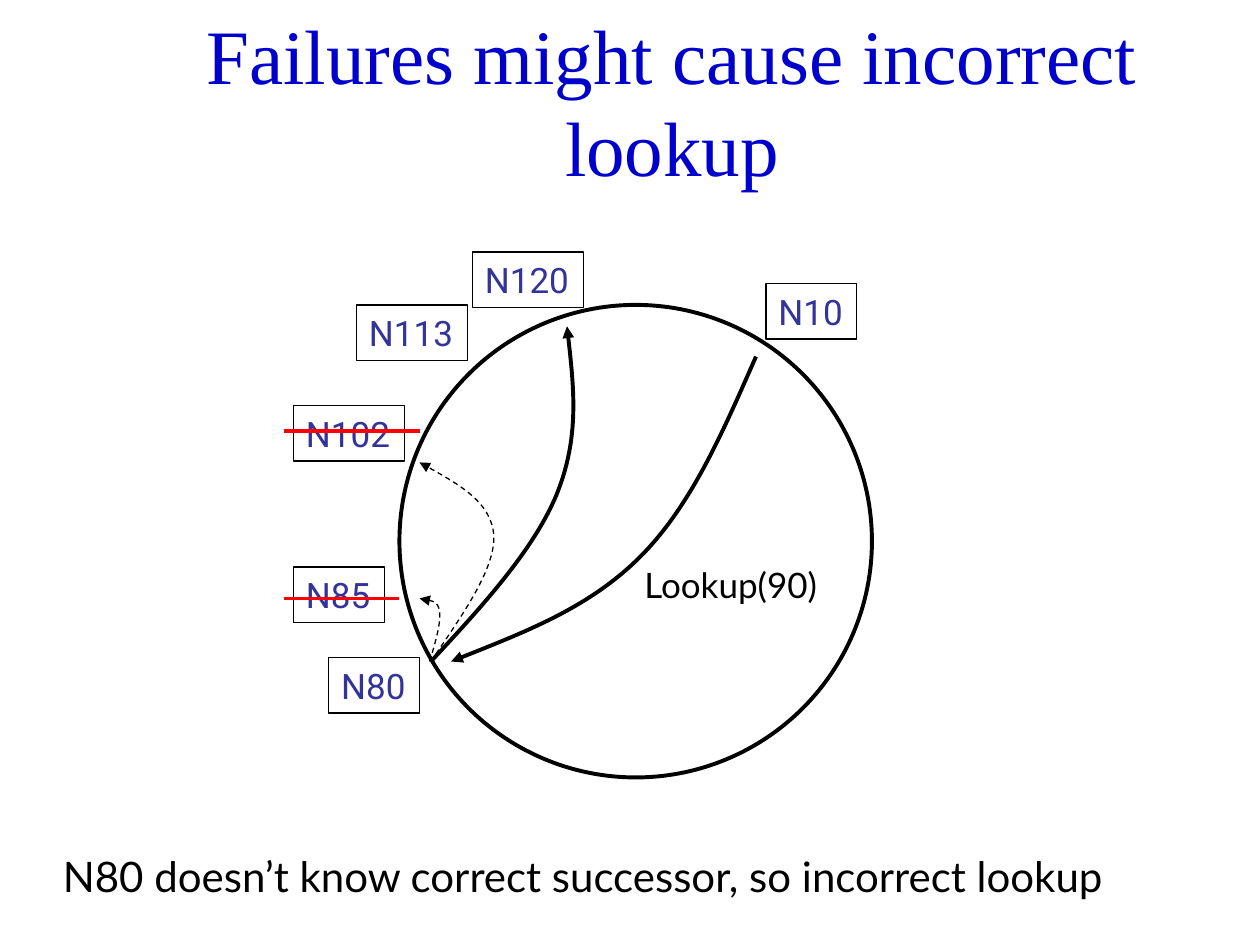
"""Build a slide on how node failures lead to an incorrect ring lookup."""
from lxml.etree import SubElement
from pptx import Presentation
from pptx.dml.color import RGBColor
from pptx.enum.dml import MSO_LINE
from pptx.enum.shapes import MSO_CONNECTOR, MSO_SHAPE
from pptx.enum.text import MSO_ANCHOR, MSO_AUTO_SIZE, PP_ALIGN
from pptx.oxml.ns import qn
from pptx.util import Inches, Pt

COLORS = {"title": "0000CC", "node": "333399", "ink": "000000", "failed": "FF0000"}


def write(shape, text, font, size, color, align=PP_ALIGN.LEFT):
    frame = shape.text_frame
    frame.text = text
    frame.word_wrap = False
    paragraph = frame.paragraphs[0]
    paragraph.alignment = align
    paragraph.font.name = font
    paragraph.font.size = Pt(size)
    paragraph.font.color.rgb = RGBColor.from_string(COLORS[color])


def outline(shape, width, color="ink"):
    shape.line.color.rgb = RGBColor.from_string(COLORS[color])
    shape.line.width = Pt(width)


prs = Presentation()
prs.slide_width, prs.slide_height = Inches(10), Inches(7.5)
slide = prs.slides.add_slide(prs.slide_layouts[5])
shapes = slide.shapes

title = shapes.title
title.left, title.top, title.width, title.height = map(Inches, (0.67, 0.33, 9.33, 0.92))
write(title, "Failures might cause incorrect lookup", "Times New Roman", 44, "title", PP_ALIGN.CENTER)
title.text_frame.word_wrap = True
title.text_frame.auto_size = MSO_AUTO_SIZE.NONE
title.text_frame.vertical_anchor = MSO_ANCHOR.MIDDLE

ring = shapes.add_shape(MSO_SHAPE.OVAL, Inches(3.17), Inches(2.42), Inches(3.75), Inches(3.75))
ring.shadow.inherit = False
ring.fill.background()
outline(ring, 2.25)

nodes = [
    ("N120", 3.75, 2), ("N113", 2.83, 2.42), ("N102", 2.33, 3.22),
    ("N80", 2.61, 5.22), ("N85", 2.33, 4.5), ("N10", 6.08, 2.25),
]
for label, left, top in nodes:
    width = 0.88 if len(label) == 4 else 0.72
    node = shapes.add_shape(MSO_SHAPE.RECTANGLE, Inches(left), Inches(top), Inches(width), Inches(0.44))
    node.shadow.inherit = False
    node.fill.background()
    outline(node, 0.75)
    write(node, label, "Roboto", 20, "node")

for right, y in [(3.17, 4.75), (3.33, 3.42)]:
    strike = shapes.add_connector(MSO_CONNECTOR.STRAIGHT, Inches(2.25), Inches(y), Inches(right), Inches(y))
    outline(strike, 2.25, "failed")
    SubElement(strike._element.spPr, qn("a:effectLst"))

hops = [
    ([(3.41, 5.25), (3.46, 5.09), (3.5, 4.94), (3.49, 4.85), (3.47, 4.77), (3.4, 4.76), (3.33, 4.75)], True),
    ([(3.42, 5.25), (3.67, 4.88), (3.93, 4.52), (3.92, 4.25), (3.9, 3.99), (3.62, 3.83), (3.33, 3.67)], True),
    ([(3.42, 5.25), (3.83, 4.81), (4.24, 4.36), (4.42, 3.92), (4.6, 3.47), (4.55, 3.03), (4.5, 2.59)], False),
    ([(6, 2.83), (5.74, 3.42), (5.49, 4.01), (5.08, 4.42), (4.68, 4.82), (4.13, 5.03), (3.58, 5.25)], False),
]
for controls, failed in hops:
    start, *others = [(Inches(x), Inches(y)) for x, y in controls]
    builder = shapes.build_freeform(*start)
    builder.add_line_segments(others, close=False)
    hop = builder.convert_to_shape()
    hop.shadow.inherit = False
    hop.fill.background()
    outline(hop, 0.75 if failed else 2.25)
    if failed:
        hop.line.dash_style = MSO_LINE.DASH
    SubElement(hop.line._ln, qn("a:tailEnd"), type="triangle")
    track = next(hop._element.iter(qn("a:path")))
    segments = track.findall(qn("a:lnTo"))
    for first in range(0, len(segments), 3):
        curve = SubElement(track, qn("a:cubicBezTo"))
        for segment in segments[first:first + 3]:
            curve.append(segment[0])
            track.remove(segment)

captions = [
    ("N80 doesn’t know correct successor, so incorrect lookup", 0.4, 6.7, 8.47, 0.5, 24, PP_ALIGN.LEFT),
    ("Lookup(90)", 5, 4.42, 1.6, 0.43, 20, PP_ALIGN.CENTER),
]
for text, left, top, width, height, size, align in captions:
    caption = shapes.add_textbox(Inches(left), Inches(top), Inches(width), Inches(height))
    write(caption, text, "Lato", size, "ink", align)

prs.save("out.pptx")
